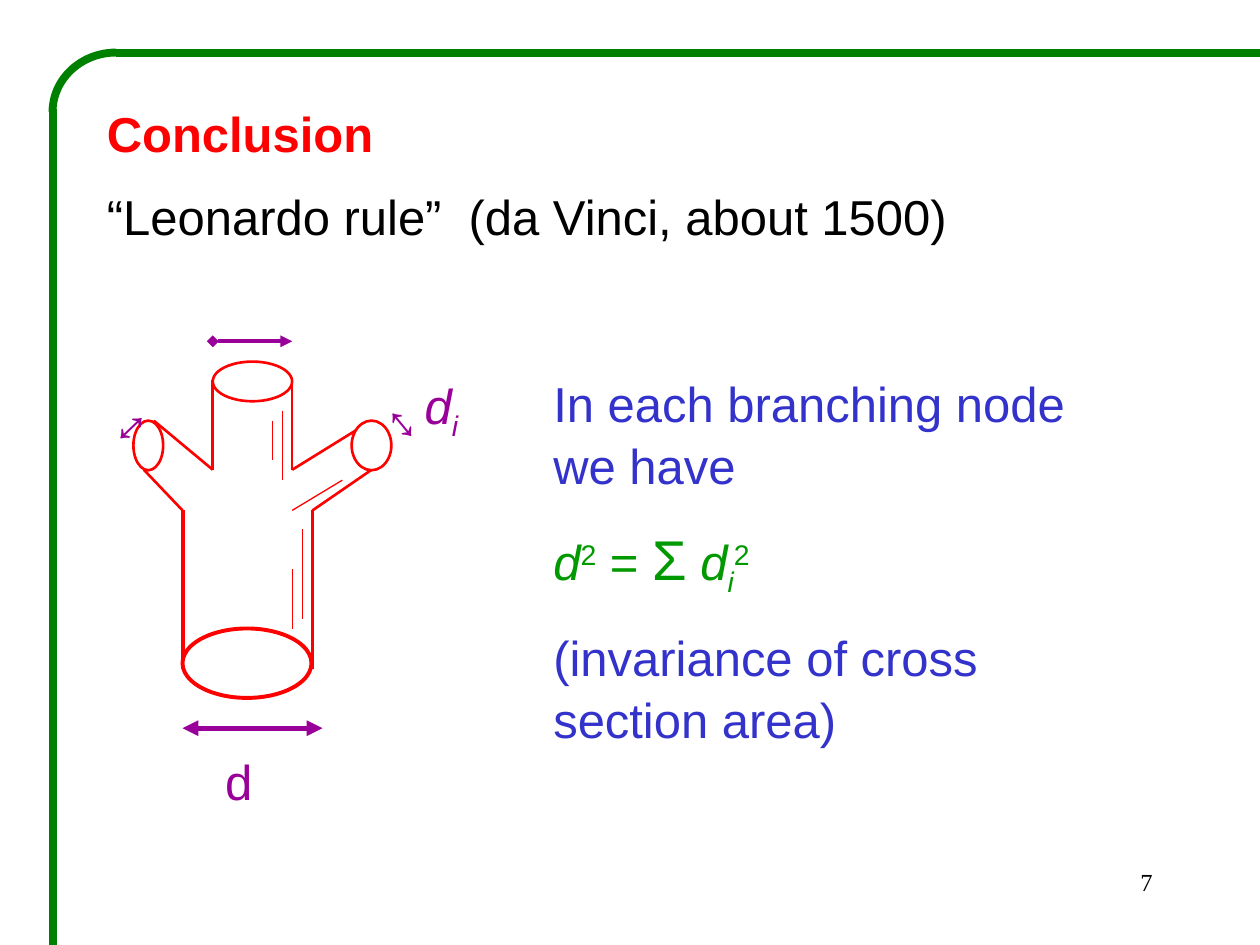
"""Build the slide on the Leonardo rule for branching nodes."""
import pptx
import pptx.dml.color
import pptx.enum.shapes
import pptx.enum.text
import pptx.oxml
import pptx.oxml.ns
import pptx.util

Cm, Pt = pptx.util.Cm, pptx.util.Pt
RGBColor = pptx.dml.color.RGBColor
SHAPE = pptx.enum.shapes.MSO_SHAPE
ALIGN = pptx.enum.text.PP_ALIGN

RED = RGBColor(0xFF, 0x00, 0x00)
BLACK = RGBColor(0x00, 0x00, 0x00)
WHITE = RGBColor(0xFF, 0xFF, 0xFF)
PURPLE = RGBColor(0x99, 0x00, 0x99)
BLUE = RGBColor(0x33, 0x33, 0xCC)
FORMULA_GREEN = RGBColor(0x00, 0x99, 0x00)
FRAME_GREEN = RGBColor(0x00, 0x80, 0x00)

ITALIC = {"italic": True}
SUBSCRIPT = {"italic": True, "baseline": -25000}
SUPERSCRIPT = {"baseline": 30000}


def add_xml(parent, tag, **attributes):
    element = pptx.oxml.parse_xml(f"<a:{tag} {pptx.oxml.ns.nsdecls('a')}/>")
    for name, value in attributes.items():
        element.set(name, str(value))
    parent.append(element)


def add_run(paragraph, text, color, size=28, font="Arial", bold=False,
            italic=False, baseline=0):
    run = paragraph.add_run()
    run.text = text
    run.font.name, run.font.size = font, Pt(size)
    run.font.bold, run.font.italic = bold, italic
    run.font.color.rgb = color
    if baseline:
        run.font._element.set("baseline", str(baseline))


def fill_text(shape, box, paragraphs, align=ALIGN.LEFT, line_spacing=1.05):
    shape.left, shape.top, shape.width, shape.height = map(Cm, box)
    frame = shape.text_frame
    frame.word_wrap = True
    frame.auto_size = pptx.enum.text.MSO_AUTO_SIZE.NONE
    frame.vertical_anchor = pptx.enum.text.MSO_ANCHOR.TOP
    for index, (color, runs) in enumerate(paragraphs):
        paragraph = frame.add_paragraph() if index else frame.paragraphs[0]
        paragraph.alignment = align
        paragraph.line_spacing = line_spacing
        paragraph.space_before = Pt(15 if index else 0)
        properties = paragraph._p.get_or_add_pPr()
        properties.set("marL", "0")
        properties.set("indent", "0")
        add_xml(properties, "buNone")
        for text, style in runs:
            add_run(paragraph, text, color, **style)


def add_label(slide, box, runs, color=PURPLE, rotation=0, **layout):
    label = slide.shapes.add_textbox(*map(Cm, box))
    fill_text(label, box, [(color, runs)], **layout)
    label.rotation = rotation


def add_line(slide, points, color, width, head=None, tail=None):
    line = slide.shapes.add_connector(
        pptx.enum.shapes.MSO_CONNECTOR.STRAIGHT, *map(Cm, points))
    line.line.color.rgb = color
    line.line.width = Pt(width)
    for tag, kind in (("headEnd", head), ("tailEnd", tail)):
        if kind:
            add_xml(line.line._get_or_add_ln(), tag, type=kind)
    add_xml(line._element.spPr, "effectLst")


def add_outline(slide, kind, box, color, width):
    shape = slide.shapes.add_shape(kind, *map(Cm, box))
    shape.shadow.inherit = False
    shape.line.color.rgb = color
    shape.line.width = Pt(width)
    return shape


def add_section(slide, box, width):
    section = add_outline(slide, SHAPE.OVAL, box, RED, width)
    section.fill.solid()
    section.fill.fore_color.rgb = WHITE


def add_frame(slide):
    add_line(slide, (2.34, 1.06, 25.4, 1.06), FRAME_GREEN, 4.5)
    add_line(slide, (1.06, 2.2, 1.06, 19.05), FRAME_GREEN, 4.5)
    corner = add_outline(slide, SHAPE.ARC, (1.06, 1.06, 2.56, 2.4), FRAME_GREEN, 4.5)
    corner.fill.background()
    corner.adjustments[0], corner.adjustments[1] = 108, 162


def add_branching_node(slide):
    for x in (3.68, 6.3):
        add_line(slide, (x, 10.29, x, 13.49), RED, 2.25)
    for x in (4.29, 5.89):
        add_line(slide, (x, 9.47, x, 7.67), RED, 1.5)
    for points in ((6.3, 10.29, 7.49, 9.47), (5.89, 9.47, 7.49, 8.48),
                   (3.68, 10.29, 2.9, 9.47), (3.1, 8.48, 4.29, 9.47)):
        add_line(slide, points, RED, 1.5)
    add_section(slide, (3.68, 12.67, 2.6, 1.4), 2.25)
    for box in ((7.09, 8.48, 0.8, 1), (2.69, 8.48, 0.6, 1), (4.29, 7.29, 1.6, 0.8)):
        add_section(slide, box, 1.5)
    for points in ((6.1, 10.67, 6.1, 12.47), (5.89, 11.48, 5.89, 12.67),
                   (5.89, 10.29, 6.9, 9.68), (5.49, 8.48, 5.49, 9.27),
                   (5.69, 8.28, 5.69, 9.68)):
        add_line(slide, points, RED, 0.75)


def add_diameters(slide):
    add_line(slide, (3.68, 14.68, 6.5, 14.68), PURPLE, 3, "triangle", "triangle")
    add_line(slide, (4.29, 6.88, 5.89, 6.88), PURPLE, 2.25, "diamond", "triangle")
    add_label(slide, (4.29, 14.96, 1.4, 1.45), [("d", {})])
    add_label(slide, (8.31, 7.37, 2.41, 1.45), [("d", ITALIC), ("i", SUBSCRIPT)])
    add_label(slide, (7.49, 7.87, 2, 1.45), [("↔", {})], rotation=50.6)
    add_label(slide, (1.7, 7.67, 1.6, 1.45), [("↔", {})], rotation=316.1)


def main():
    presentation = pptx.Presentation()
    presentation.slide_width, presentation.slide_height = Cm(25.4), Cm(19.05)
    slide = presentation.slides.add_slide(presentation.slide_layouts[3])
    title, rule, explanation = list(slide.placeholders)[:3]
    fill_text(title, (1.9, 1.91, 18, 1.45), [(RED, [("Conclusion", {"bold": True})])])
    fill_text(rule, (1.9, 3.58, 18, 1.45),
              [(BLACK, [("“Leonardo rule”  (da Vinci, about 1500)", {})])])
    formula = [("d", ITALIC), ("2", SUPERSCRIPT), (" = ", {}), ("Σ", {"size": 32}),
               (" ", {}), ("d", ITALIC), ("i", SUBSCRIPT), ("2", SUPERSCRIPT)]
    fill_text(explanation, (10.9, 7.35, 11.2, 7.7), [
        (BLUE, [("In each branching node we have", {})]),
        (FORMULA_GREEN, formula),
        (BLUE, [("(invariance of cross section area)", {})]),
    ])
    add_branching_node(slide)
    add_diameters(slide)
    add_frame(slide)
    add_label(slide, (18.21, 17.35, 5.28, 1.27),
              [("7", {"size": 14, "font": "Times New Roman"})],
              BLACK, align=ALIGN.RIGHT, line_spacing=1)
    presentation.save("out.pptx")


if __name__ == "__main__":
    main()
